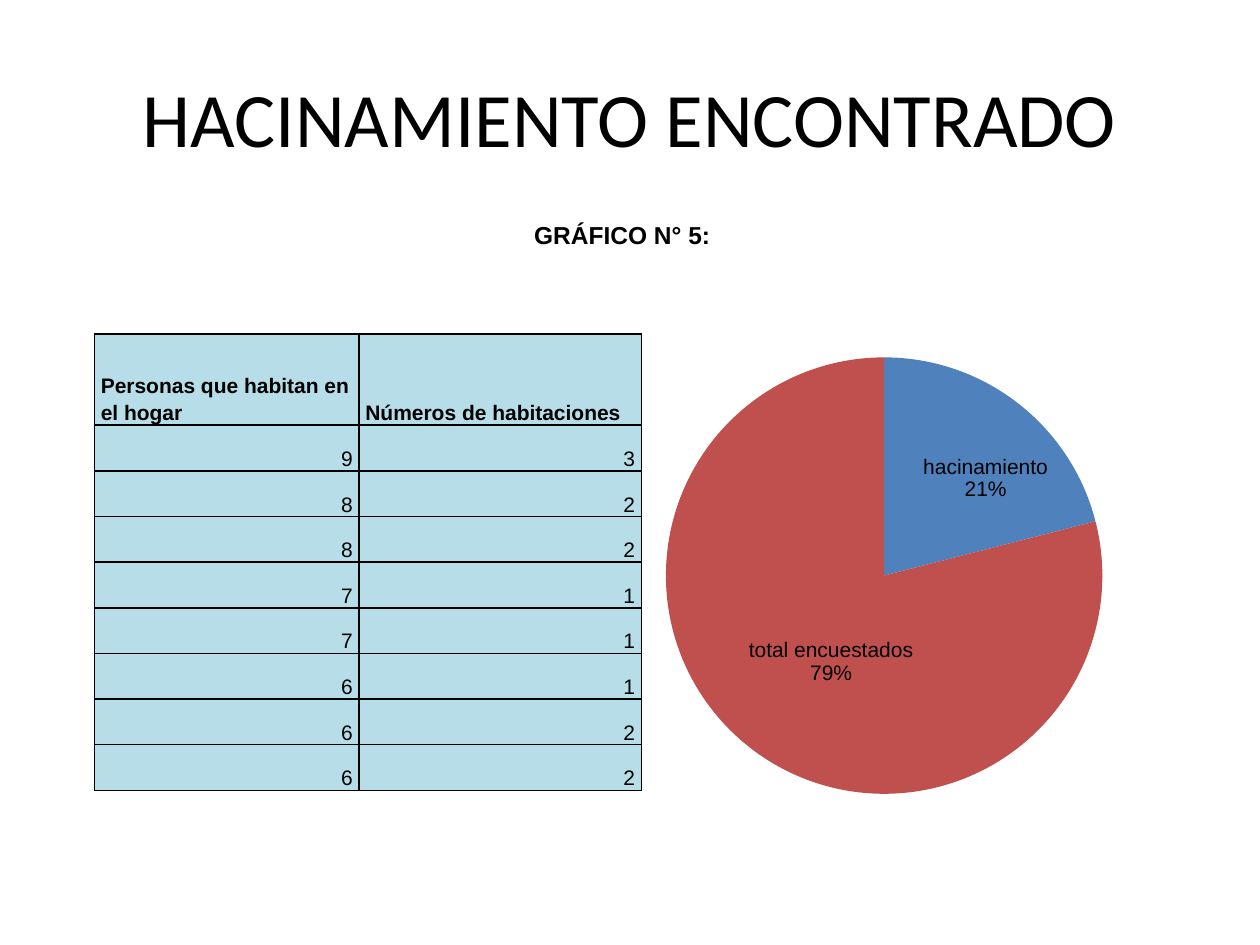
"""Build the overcrowding slide: a title, a caption, a household table and a pie chart."""
from dataclasses import dataclass

from lxml import etree
from pptx import Presentation
from pptx import util as u
from pptx.chart.data import CategoryChartData
from pptx.dml.color import RGBColor
from pptx.enum import chart as charts, text
from pptx.oxml import ns

BLACK, PALE_BLUE, BLUE, RED = "000000", "B7DEE8", "4F81BD", "C0504D"
HEADERS = ("Personas que habitan en el hogar", "Números de habitaciones")
HOUSEHOLDS = ((9, 3), (8, 2), (8, 2), (7, 1), (7, 1), (6, 1), (6, 2), (6, 2))
COLUMN_WIDTHS = (151.2, 161.3)
ROW_HEIGHT = 26.1


@dataclass(frozen=True)
class Box:
    left: float
    top: float
    width: float
    height: float

    def lengths(self) -> tuple:
        return tuple(u.Pt(n) for n in (self.left, self.top, self.width, self.height))


@dataclass(frozen=True)
class Heading:
    wording: str
    box: Box
    size: float
    face: str
    bold: bool
    anchor: text.MSO_ANCHOR
    space_before: float


@dataclass(frozen=True)
class Slice:
    category: str
    label: str
    value: int
    color: str
    shift: tuple


HEADINGS = (
    Heading("HACINAMIENTO ENCONTRADO", Box(36, 21.6, 648, 90), 44, "Calibri", False,
            text.MSO_ANCHOR.MIDDLE, 0),
    Heading("GRÁFICO N° 5: ", Box(42.5, 122.4, 630, 391), 14, "Arial", True,
            text.MSO_ANCHOR.TOP, 2.8),
)
SLICES = (
    Slice("hacinamiento", "hacinamiento", 21, BLUE, (0.05, -0.02)),
    Slice("total enc", "total encuestados", 79, RED, (0.02, 0)),
)


def color(value: str) -> RGBColor:
    return RGBColor.from_string(value)


def set_font(font, size: float, face: str = "Arial", bold: bool = False) -> None:
    font.size, font.name, font.bold = u.Pt(size), face, bold
    font.color.rgb = color(BLACK)


def add_heading(slide, heading: Heading) -> None:
    frame = slide.shapes.add_textbox(*heading.box.lengths()).text_frame
    frame.word_wrap = True
    frame.vertical_anchor = heading.anchor
    paragraph = frame.paragraphs[0]
    paragraph.text = heading.wording
    paragraph.alignment = text.PP_ALIGN.CENTER
    paragraph.space_before = u.Pt(heading.space_before)
    set_font(paragraph.font, heading.size, heading.face, heading.bold)


def add_borders(cell) -> None:
    properties = cell._tc.get_or_add_tcPr()
    for position, side in enumerate(("lnL", "lnR", "lnT", "lnB")):
        line = etree.Element(ns.qn(f"a:{side}"), w=str(u.Pt(1)))
        fill = etree.SubElement(line, ns.qn("a:solidFill"))
        etree.SubElement(fill, ns.qn("a:srgbClr"), val=BLACK)
        properties.insert(position, line)


def fill_cell(cell, wording: str, is_header: bool) -> None:
    cell.fill.solid()
    cell.fill.fore_color.rgb = color(PALE_BLUE)
    cell.margin_left = cell.margin_right = u.Pt(3.6)
    cell.margin_top = cell.margin_bottom = 0
    cell.vertical_anchor = text.MSO_ANCHOR.BOTTOM
    paragraph = cell.text_frame.paragraphs[0]
    paragraph.text = wording
    paragraph.alignment = text.PP_ALIGN.LEFT if is_header else text.PP_ALIGN.RIGHT
    paragraph.line_spacing = 1.15
    set_font(paragraph.font, 12, bold=is_header)
    add_borders(cell)


def add_household_table(slide) -> None:
    rows = (HEADERS, *HOUSEHOLDS)
    box = Box(54, 190.8, sum(COLUMN_WIDTHS), ROW_HEIGHT * (len(rows) + 1))
    table = slide.shapes.add_table(len(rows), len(HEADERS), *box.lengths()).table
    for column, width in zip(table.columns, COLUMN_WIDTHS):
        column.width = u.Pt(width)
    for index, values in enumerate(rows):
        is_header = index == 0
        table.rows[index].height = u.Pt(ROW_HEIGHT * (2 if is_header else 1))
        for cell, value in zip(table.rows[index].cells, values):
            fill_cell(cell, str(value), is_header)


def make_layout(**settings) -> etree._Element:
    layout = etree.Element(ns.qn("c:layout"))
    manual = etree.SubElement(layout, ns.qn("c:manualLayout"))
    for name, value in settings.items():
        etree.SubElement(manual, ns.qn(f"c:{name}"), val=str(value))
    return layout


def style_slice(point, part: Slice) -> None:
    point.format.fill.solid()
    point.format.fill.fore_color.rgb = color(part.color)
    frame = point.data_label.text_frame
    frame.text = f"{part.label}\n{part.value}%"
    for paragraph in frame.paragraphs:
        set_font(paragraph.font, 12)
    point.data_label.position = charts.XL_LABEL_POSITION.CENTER


def add_pie(slide) -> None:
    data = CategoryChartData()
    data.categories = [part.category for part in SLICES]
    data.add_series("Series 1", [part.value for part in SLICES])
    box = Box(308.9, 179.3, 396.7, 311.8)
    chart = slide.shapes.add_chart(charts.XL_CHART_TYPE.PIE, *box.lengths(), data).chart
    chart.has_title = chart.has_legend = False
    set_font(chart.font, 10, "Calibri")
    plot = chart.plots[0]
    plot.vary_by_categories = True
    plot.has_data_labels = True
    labels = plot.data_labels
    labels.show_category_name = labels.show_percentage = True
    labels.show_value = False
    set_font(labels.font, 12)
    series = plot.series[0]
    for index, part in enumerate(SLICES):
        style_slice(series.points[index], part)
    for label, part in zip(series._element.iter(ns.qn("c:dLbl")), SLICES):
        label.insert(1, make_layout(x=part.shift[0], y=part.shift[1]))
    area = chart._chartSpace.chart.plotArea
    for layout in area.findall(ns.qn("c:layout")):
        area.remove(layout)
    area.insert(0, make_layout(layoutTarget="inner", xMode="edge", yMode="edge",
                               x=0.18, y=0.08, w=0.63, h=0.8))


def main() -> None:
    presentation = Presentation()
    presentation.slide_width, presentation.slide_height = u.Pt(720), u.Pt(540)
    slide = presentation.slides.add_slide(presentation.slide_layouts[6])
    for heading in HEADINGS:
        add_heading(slide, heading)
    add_pie(slide)
    add_household_table(slide)
    presentation.save("out.pptx")


if __name__ == "__main__":
    main()
